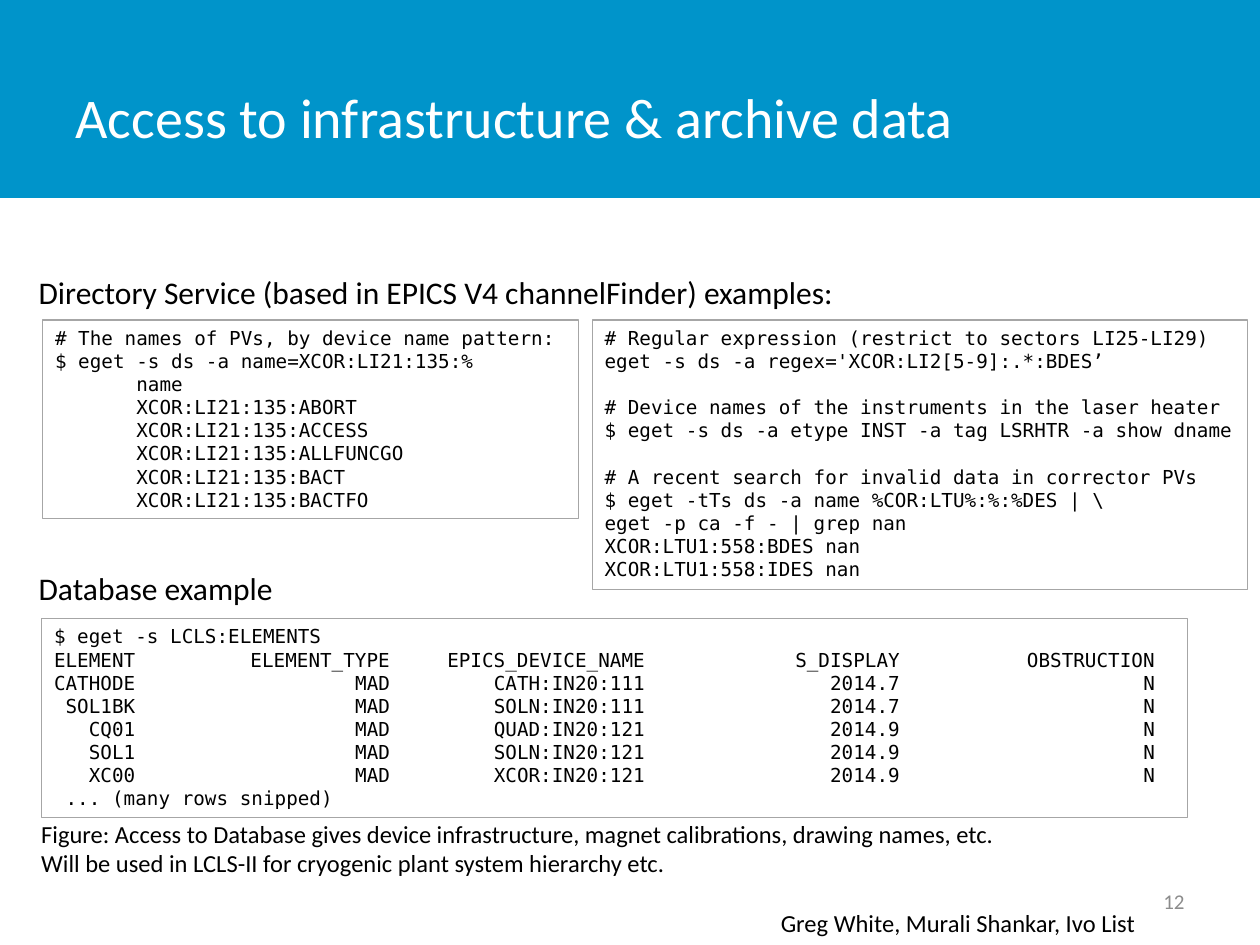
from lxml import etree
from pptx import Presentation
from pptx.dml.color import RGBColor
from pptx.enum.shapes import MSO_SHAPE as Shape
from pptx.enum.text import MSO_ANCHOR as Anchor, PP_ALIGN as Align
from pptx.oxml.ns import qn
from pptx.util import Cm, Pt

BLUE = RGBColor(0x00, 0x94, 0xCA)
WHITE = RGBColor(0xFF, 0xFF, 0xFF)
BLACK = RGBColor(0x00, 0x00, 0x00)
GREY = RGBColor(0x8C, 0x8C, 0x8C)
BORDER = RGBColor(0xA6, 0xA6, 0xA6)
BODY_FONT = "Calibri"
CODE_FONT = "DejaVu Sans Mono"
CODE_SIZE = 11
CODE_ADVANCE = 0.2336
COLUMN_ENDS = (29, 51, 73, 95)

PATTERN_LINES = [
    "# The names of PVs, by device name pattern:",
    "$ eget -s ds -a name=XCOR:LI21:135:%",
    "       name",
] + [f"       XCOR:LI21:135:{field}"
     for field in ("ABORT", "ACCESS", "ALLFUNCGO", "BACT", "BACTFO")]

SEARCH_LINES = [
    "# Regular expression (restrict to sectors LI25-LI29)",
    "eget -s ds -a regex='XCOR:LI2[5-9]:.*:BDES’",
    "",
    "# Device names of the instruments in the laser heater",
    "$ eget -s ds -a etype INST -a tag LSRHTR -a show dname",
    "",
    "# A recent search for invalid data in corrector PVs",
    "$ eget -tTs ds -a name %COR:LTU%:%:%DES | \\",
    "eget -p ca -f - | grep nan",
    "XCOR:LTU1:558:BDES nan",
    "XCOR:LTU1:558:IDES nan",
]

ELEMENT_ROWS = [
    ("ELEMENT", "ELEMENT_TYPE", "EPICS_DEVICE_NAME", "S_DISPLAY", "OBSTRUCTION"),
    ("CATHODE", "MAD", "CATH:IN20:111", "2014.7", "N"),
    (" SOL1BK", "MAD", "SOLN:IN20:111", "2014.7", "N"),
    ("   CQ01", "MAD", "QUAD:IN20:121", "2014.9", "N"),
    ("   SOL1", "MAD", "SOLN:IN20:121", "2014.9", "N"),
    ("   XC00", "MAD", "XCOR:IN20:121", "2014.9", "N"),
]
DATABASE_LINES = [
    "$ eget -s LCLS:ELEMENTS",
    *("\t".join(row) for row in ELEMENT_ROWS),
    " ... (many rows snipped)",
]

FIGURE_LINES = [
    "Figure: Access to Database gives device infrastructure, "
    "magnet calibrations, drawing names, etc.",
    "Will be used in LCLS-II for cryogenic plant system hierarchy etc.",
]


def add_column_tabs(para):
    tabs = etree.SubElement(para._p.get_or_add_pPr(), qn("a:tabLst"))
    for end in COLUMN_ENDS:
        position = Cm(end * CODE_ADVANCE)
        etree.SubElement(tabs, qn("a:tab"), pos=str(int(position)), algn="r")


def write_lines(box, lines, size, font=BODY_FONT, color=BLACK,
                align=Align.LEFT, anchor=Anchor.TOP):
    frame = box.text_frame
    frame.word_wrap = True
    frame.vertical_anchor = anchor
    style = {"size": Pt(size), "name": font}
    for index, line in enumerate(lines):
        para = frame.add_paragraph() if index else frame.paragraphs[0]
        para.alignment = align
        if "\t" in line:
            add_column_tabs(para)
        if not line:
            etree.SubElement(para._p, qn("a:endParaRPr"), sz=str(size * 100))
            continue
        span = para.add_run()
        span.text = line
        for name, value in style.items():
            setattr(span.font, name, value)
        span.font.color.rgb = color


def add_band(page):
    band = page.shapes.add_shape(Shape.RECTANGLE, 0, 0, Cm(25.4), Cm(3.99))
    band.shadow.inherit = False
    band.fill.solid()
    band.fill.fore_color.rgb = BLUE
    band.line.fill.background()
    page.shapes._spTree.insert(2, band._element)


def set_title(page, text):
    title = page.shapes.title
    place = {"left": Cm(1.27), "top": Cm(0.76), "width": Cm(19.84), "height": Cm(3.18)}
    for name, value in place.items():
        setattr(title, name, value)
    write_lines(title, [text], 32, color=WHITE, anchor=Anchor.MIDDLE)


def add_text(page, place, lines, size, **style):
    box = page.shapes.add_textbox(*map(Cm, place))
    write_lines(box, lines, size, **style)


def add_code(page, place, lines, border=0.75):
    box = page.shapes.add_shape(Shape.RECTANGLE, *map(Cm, place))
    box.shadow.inherit = False
    box.fill.background()
    box.line.color.rgb = BORDER
    box.line.width = Pt(border)
    write_lines(box, lines, CODE_SIZE, font=CODE_FONT)


def main():
    deck = Presentation()
    deck.slide_width, deck.slide_height = Cm(25.4), Cm(19.05)
    page = deck.slides.add_slide(deck.slide_layouts[5])
    add_band(page)
    set_title(page, "Access to infrastructure & archive data")
    add_text(page, (18.21, 17.65, 5.92, 1.02), ["12"], 12,
             color=GREY, align=Align.RIGHT, anchor=Anchor.MIDDLE)
    add_text(page, (15.49, 18.19, 7.92, 0.86),
             ["Greg White, Murali Shankar, Ivo List"], 14)
    add_code(page, (0.84, 12.47, 23.09, 4.01), DATABASE_LINES, border=0.25)
    add_text(page, (0.53, 5.38, 16.71, 1.02),
             ["Directory Service (based in EPICS V4 channelFinder) examples:"], 18)
    add_text(page, (0.53, 11.35, 5.31, 1.02), ["Database example"], 18)
    add_text(page, (0.58, 16.38, 19.96, 1.45), FIGURE_LINES, 14)
    add_code(page, (0.86, 6.45, 10.8, 4.01), PATTERN_LINES)
    add_code(page, (11.94, 6.45, 13.21, 5.44), SEARCH_LINES)
    deck.save("out.pptx")


if __name__ == "__main__":
    main()
